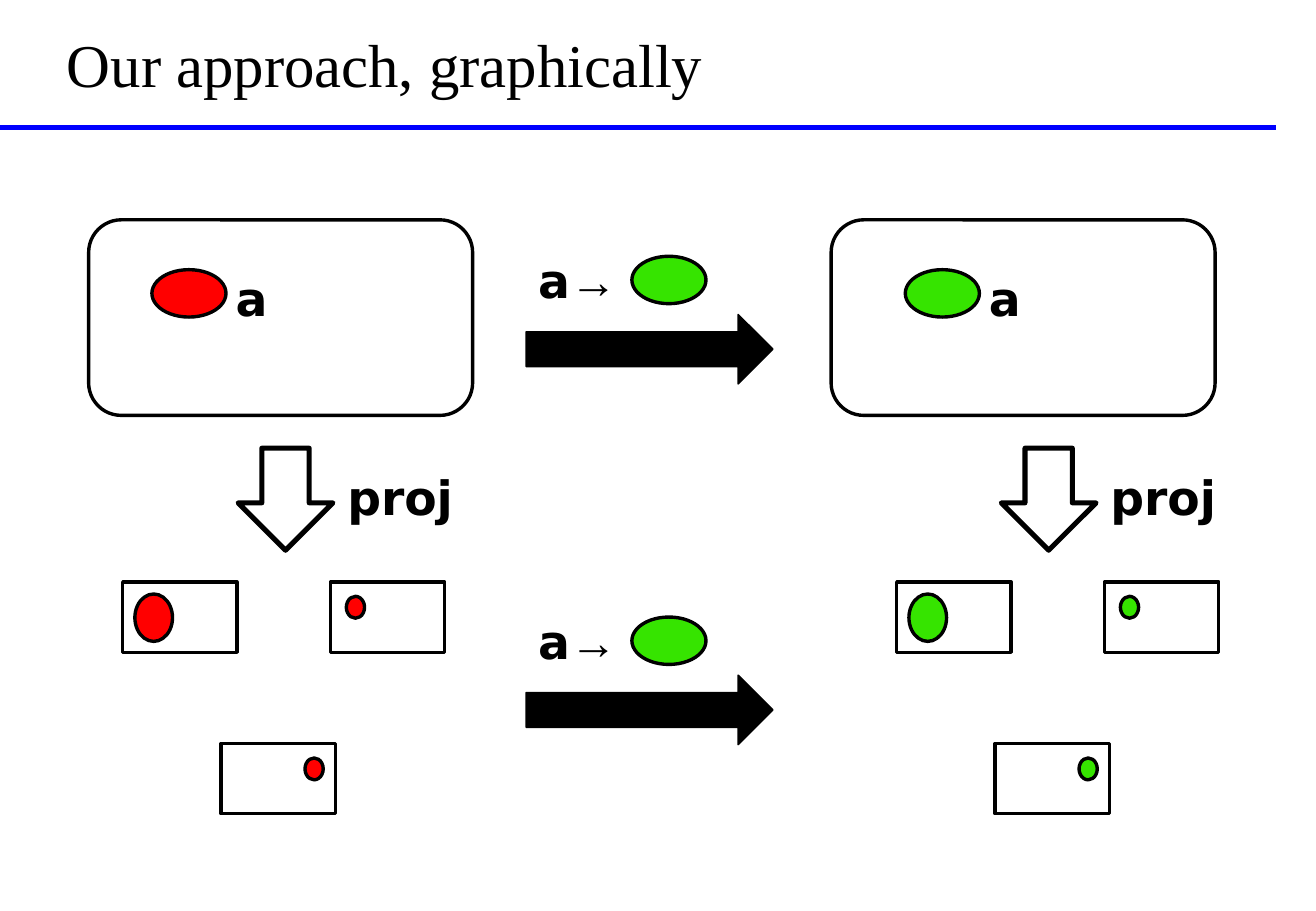
from dataclasses import dataclass

from lxml import etree
from pptx import Presentation
from pptx.dml.color import RGBColor
from pptx.enum.shapes import MSO_CONNECTOR, MSO_SHAPE as SHAPE
from pptx.enum.text import MSO_ANCHOR, MSO_AUTO_SIZE, PP_ALIGN
from pptx.oxml.ns import qn
from pptx.util import Inches, Pt


@dataclass(frozen=True)
class Theme:
    ink: RGBColor = RGBColor(0, 0, 0)
    rule: RGBColor = RGBColor(0, 0, 255)
    before: RGBColor = RGBColor(255, 0, 0)
    after: RGBColor = RGBColor(0x36, 0xE4, 0)
    serif: str = "Times New Roman"
    sans: str = "DejaVu Sans"
    title_size: int = 36
    label_size: int = 28


THEME = Theme()
OBJECT_SIZE = (0.61, 0.39)
VIEW_SIZE = (0.94, 0.58)
# Each view: its offset, then the offset and size of the object seen in it
VIEWS = [
    ((0, 0), (0.1, 0.1), (0.31, 0.39)),
    ((1.71, 0), (0.13, 0.12), (0.15, 0.18)),
    ((0.81, 1.33), (0.69, 0.12), (0.15, 0.18)),
]


def add_outline(slide, kind, x, y, size, fill=None, weight=2):
    """Add a preset shape with a black outline; no fill colour leaves it open."""
    outline = slide.shapes.add_shape(kind, Inches(x), Inches(y), *map(Inches, size))
    outline.shadow.inherit = False
    if fill is None:
        outline.fill.background()
    else:
        outline.fill.solid()
        outline.fill.fore_color.rgb = fill
    outline.line.color.rgb = THEME.ink
    outline.line.width = Pt(weight)


def style_run(run, font, size, bold):
    run.font.name = font
    run.font.size = Pt(size)
    run.font.bold = bold
    run.font.color.rgb = THEME.ink


def add_label(slide, x, y, size, word, symbol=""):
    """Add a bold label, with an optional symbol in the serif font after it."""
    label = slide.shapes.add_textbox(Inches(x), Inches(y), *map(Inches, size))
    frame = label.text_frame
    frame.word_wrap = False
    frame.auto_size = MSO_AUTO_SIZE.SHAPE_TO_FIT_TEXT
    line = frame.paragraphs[0]
    line.line_spacing = 1.2
    line.space_before = Pt(0.2 * THEME.label_size)
    for text, font in ((word, THEME.sans), (symbol, THEME.serif)):
        if text:
            run = line.add_run()
            run.text = text
            style_run(run, font, THEME.label_size, True)


def add_heading(slide, text):
    """Set the title and draw the rule under it."""
    title = slide.shapes.title
    title.left, title.top = Inches(0.45), Inches(0.18)
    title.width, title.height = Inches(9.84), Inches(0.69)
    frame = title.text_frame
    frame.text = text
    frame.vertical_anchor = MSO_ANCHOR.BOTTOM
    frame.auto_size = MSO_AUTO_SIZE.NONE
    frame.paragraphs[0].alignment = PP_ALIGN.LEFT
    style_run(frame.paragraphs[0].runs[0], THEME.serif, THEME.title_size, False)

    rule = slide.shapes.add_connector(
        MSO_CONNECTOR.STRAIGHT, Inches(0), Inches(1.05), Inches(10.5), Inches(1.05))
    rule.line.color.rgb = THEME.rule
    rule.line.width = Pt(3)
    etree.SubElement(rule._element.spPr, qn("a:effectLst"))


def add_state(slide, color, state_x, object_x, proj_x, views_x):
    """Add a state holding object a, and its projection to three views."""
    # State and its object
    add_outline(slide, SHAPE.ROUNDED_RECTANGLE, state_x, 1.81, (3.16, 1.61))
    add_outline(slide, SHAPE.OVAL, object_x, 2.22, OBJECT_SIZE, color)
    add_label(slide, object_x + 0.59, 2.07, (0.46, 0.61), "a")

    # Projection
    add_outline(slide, SHAPE.DOWN_ARROW, proj_x, 3.69, (0.78, 0.84), weight=3)
    add_label(slide, proj_x + 0.8, 3.71, (1.1, 0.61), "proj")

    # Views
    for (dx, dy), (seen_dx, seen_dy), seen_size in VIEWS:
        x, y = views_x + dx, 4.79 + dy
        add_outline(slide, SHAPE.RECTANGLE, x, y, VIEW_SIZE)
        add_outline(slide, SHAPE.OVAL, x + seen_dx, y + seen_dy, seen_size, color)


def add_update(slide, y):
    """Add the replacement of a, with the arrow from old to new below it."""
    add_label(slide, 4.33, y, (0.86, 0.67), "a", "→")
    add_outline(slide, SHAPE.OVAL, 5.2, y + 0.18, OBJECT_SIZE, THEME.after)
    add_outline(slide, SHAPE.RIGHT_ARROW, 4.33, y + 0.66, (2.03, 0.57), THEME.ink, 1)


def main():
    deck = Presentation()
    deck.slide_width, deck.slide_height = Inches(10.83), Inches(7.5)
    slide = deck.slides.add_slide(deck.slide_layouts[5])

    add_heading(slide, "Our approach, graphically")
    add_state(slide, THEME.before, state_x=0.73, object_x=1.25, proj_x=1.96, views_x=1.01)
    add_state(slide, THEME.after, state_x=6.84, object_x=7.45, proj_x=8.24, views_x=7.38)
    for y in (1.93, 4.9):
        add_update(slide, y)

    deck.save("out.pptx")


if __name__ == "__main__":
    main()
